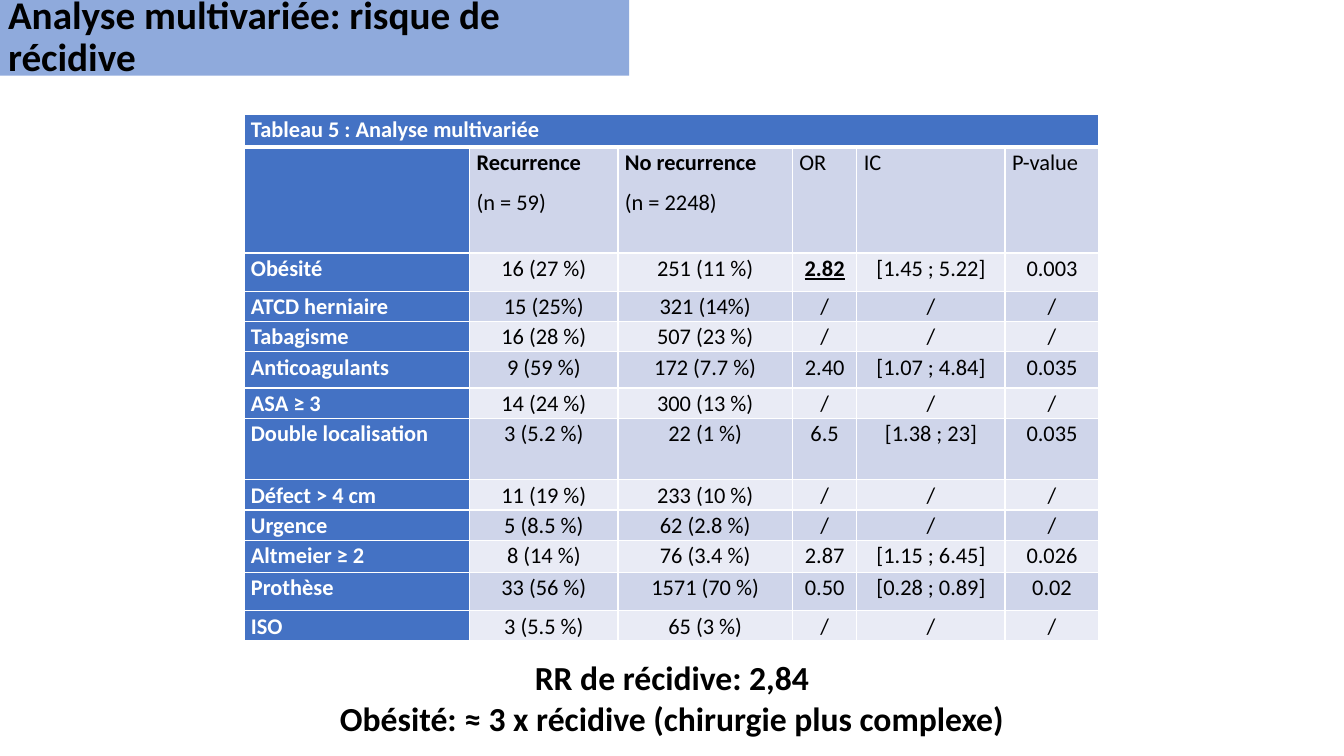
import lxml.etree
import pptx
import pptx.dml.color
import pptx.enum.text
import pptx.oxml.ns
import pptx.util

BLACK = pptx.dml.color.RGBColor(0x00, 0x00, 0x00)
WHITE = pptx.dml.color.RGBColor(0xFF, 0xFF, 0xFF)
TITLE_BLUE = pptx.dml.color.RGBColor(0x8F, 0xAA, 0xDC)
HEADER_BLUE = pptx.dml.color.RGBColor(0x44, 0x72, 0xC4)
BAND_DARK = pptx.dml.color.RGBColor(0xCF, 0xD5, 0xEA)
BAND_LIGHT = pptx.dml.color.RGBColor(0xE9, 0xEB, 0xF5)

LEFT = pptx.enum.text.PP_ALIGN.LEFT
CENTER = pptx.enum.text.PP_ALIGN.CENTER

TABLE_TITLE = "Tableau 5 : Analyse multivariée"
COLUMN_WIDTHS = [16.8, 11.03, 12.98, 4.8, 11.03, 6.98]
ROW_HEIGHTS = [4.4, 14, 5.07, 4, 4, 4.8, 4, 8.13, 4, 4, 4.27, 5.07, 4]
COLUMN_HEADS = ["", "Recurrence\n(n = 59)", "No recurrence\n(n = 2248)", "OR", "IC", "P-value"]
RISK_FACTORS = [
    ["Obésité", "16 (27 %)", "251 (11 %)", "2.82", "[1.45 ; 5.22]", "0.003"],
    ["ATCD herniaire", "15 (25%)", "321 (14%)", "/", "/", "/"],
    ["Tabagisme", "16 (28 %)", "507 (23 %)", "/", "/", "/"],
    ["Anticoagulants", "9 (59 %)", "172 (7.7 %)", "2.40", "[1.07 ; 4.84]", "0.035"],
    ["ASA ≥ 3", "14 (24 %)", "300 (13 %)", "/", "/", "/"],
    ["Double localisation", "3 (5.2 %)", "22 (1 %)", "6.5", "[1.38 ; 23]", "0.035"],
    ["Défect > 4 cm", "11 (19 %)", "233 (10 %)", "/", "/", "/"],
    ["Urgence", "5 (8.5 %)", "62 (2.8 %)", "/", "/", "/"],
    ["Altmeier ≥ 2", "8 (14 %)", "76 (3.4 %)", "2.87", "[1.15 ; 6.45]", "0.026"],
    ["Prothèse", "33 (56 %)", "1571 (70 %)", "0.50", "[0.28 ; 0.89]", "0.02"],
    ["ISO", "3 (5.5 %)", "65 (3 %)", "/", "/", "/"],
]


class SlideBuilder:
    """Hold the style and the current slide, with lengths in percent of its size."""

    font_name = "Calibri"

    def __init__(self, presentation):
        self.width = presentation.slide_width
        self.height = presentation.slide_height
        self.slide = presentation.slides.add_slide(presentation.slide_layouts[5])

    def across(self, share):
        return round(self.width * share / 100)

    def down(self, share):
        return round(self.height * share / 100)

    def box(self, left, top, width, height):
        return self.across(left), self.down(top), self.across(width), self.down(height)

    def format_paragraph(self, paragraph, size, color=BLACK, bold=False, alignment=LEFT):
        paragraph.alignment = alignment
        for run in paragraph.runs:
            run.font.name = self.font_name
            run.font.size = pptx.util.Pt(size)
            run.font.bold = bold
            run.font.color.rgb = color

    def title(self, text, *place):
        shape = self.slide.shapes.title
        shape.left, shape.top, shape.width, shape.height = self.box(*place)
        shape.fill.solid()
        shape.fill.fore_color.rgb = TITLE_BLUE
        frame = shape.text_frame
        frame.text = text
        frame.word_wrap = True
        frame.auto_size = pptx.enum.text.MSO_AUTO_SIZE.NONE
        frame.vertical_anchor = pptx.enum.text.MSO_ANCHOR.MIDDLE
        paragraph = frame.paragraphs[0]
        paragraph.line_spacing = 0.9
        paragraph.space_before = pptx.util.Pt(0)
        self.format_paragraph(paragraph, 28, bold=True)

    def conclusion(self, text, *place):
        frame = self.slide.shapes.add_textbox(*self.box(*place)).text_frame
        frame.word_wrap = True
        frame.text = text
        for paragraph in frame.paragraphs:
            self.format_paragraph(paragraph, 24, bold=True, alignment=CENTER)

    def borders(self, cell, bottom_width=1):
        properties = cell._tc.get_or_add_tcPr()
        qualified = pptx.oxml.ns.qn
        widths = {"a:lnL": 1, "a:lnR": 1, "a:lnT": 1, "a:lnB": bottom_width}
        for position, (side, width) in enumerate(widths.items()):
            line = lxml.etree.Element(qualified(side), w=str(pptx.util.Pt(width)))
            fill = lxml.etree.SubElement(line, qualified("a:solidFill"))
            lxml.etree.SubElement(fill, qualified("a:srgbClr"), val=str(WHITE))
            properties.insert(position, line)

    def cell(self, cell, text, fill, color=BLACK, bold=False, alignment=LEFT, bottom_width=1):
        cell.margin_left = cell.margin_right = pptx.util.Inches(0.07)
        cell.margin_top = cell.margin_bottom = 0
        cell.fill.solid()
        cell.fill.fore_color.rgb = fill
        self.borders(cell, bottom_width)
        cell.text_frame.text = text
        for paragraph in cell.text_frame.paragraphs:
            paragraph.line_spacing = 1.07
            paragraph.space_after = pptx.util.Pt(8)
            self.format_paragraph(paragraph, 16, color, bold, alignment)

    def table(self, left, top):
        place = self.box(left, top, sum(COLUMN_WIDTHS), sum(ROW_HEIGHTS))
        table = self.slide.shapes.add_table(len(ROW_HEIGHTS), len(COLUMN_WIDTHS), *place).table
        table.first_row = table.horz_banding = False
        for column, width in zip(table.columns, COLUMN_WIDTHS):
            column.width = self.across(width)
        for row, height in zip(table.rows, ROW_HEIGHTS):
            row.height = self.down(height)

        table.cell(0, 0).merge(table.cell(0, len(COLUMN_WIDTHS) - 1))
        for column in range(len(COLUMN_WIDTHS)):
            text = "" if column else TABLE_TITLE
            self.cell(table.cell(0, column), text, HEADER_BLUE, WHITE, True, bottom_width=3)

        for row, values in enumerate([COLUMN_HEADS] + RISK_FACTORS, start=1):
            band = BAND_DARK if row % 2 else BAND_LIGHT
            alignment = LEFT if row == 1 else CENTER
            self.cell(table.cell(row, 0), values[0], HEADER_BLUE, WHITE, True)
            for column, value in enumerate(values[1:], start=1):
                self.cell(table.cell(row, column), value, band, alignment=alignment)

        for column in (1, 2):
            table.cell(1, column).text_frame.paragraphs[0].runs[0].font.bold = True
        obesity_ratio = table.cell(2, 3).text_frame.paragraphs[0].runs[0].font
        obesity_ratio.bold = obesity_ratio.underline = True


def main():
    presentation = pptx.Presentation()
    presentation.slide_width = pptx.util.Inches(13.33)
    presentation.slide_height = pptx.util.Inches(7.5)
    builder = SlideBuilder(presentation)
    builder.title("Analyse multivariée: risque de récidive", -0.15, 0, 46.96, 10)
    builder.table(18.15, 15.07)
    builder.conclusion(
        "RR de récidive: 2,84\nObésité: ≈ 3 x récidive (chirurgie plus complexe)",
        4.8, 86.27, 90.4, 16.13,
    )
    presentation.save("out.pptx")


if __name__ == "__main__":
    main()
